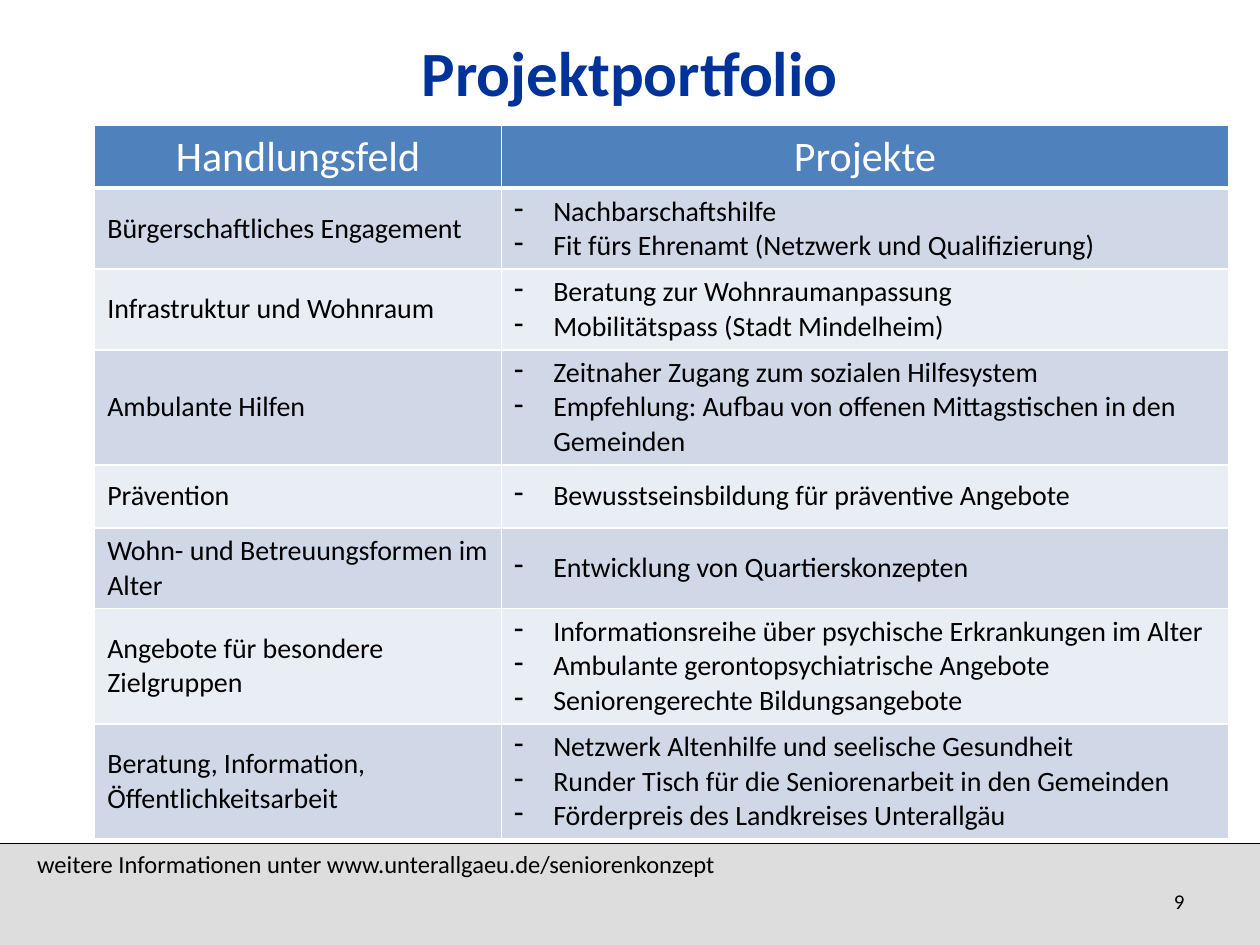
from lxml.etree import SubElement as Sub
from pptx import Presentation
from pptx.dml.color import RGBColor as Rgb
from pptx.enum.shapes import MSO_CONNECTOR as Link, MSO_SHAPE as Kind
from pptx.enum.text import MSO_ANCHOR as Anchor, PP_ALIGN as Align
from pptx.oxml.ns import qn
from pptx.util import Cm, Pt

TITLE = "Projektportfolio"
HEAD = ("Handlungsfeld", "Projekte")
FIELDS = [
    ("Bürgerschaftliches Engagement", 1.63,
     ["Nachbarschaftshilfe",
      "Fit fürs Ehrenamt (Netzwerk und Qualifizierung)"]),
    ("Infrastruktur und Wohnraum", 1.63,
     ["Beratung zur Wohnraumanpassung",
      "Mobilitätspass (Stadt Mindelheim)"]),
    ("Ambulante Hilfen", 2.32,
     ["Zeitnaher Zugang zum sozialen Hilfesystem",
      "Empfehlung: Aufbau von offenen Mittagstischen in den Gemeinden"]),
    ("Prävention", 1.27,
     ["Bewusstseinsbildung für präventive Angebote"]),
    ("Wohn- und Betreuungsformen im Alter", 1.63,
     ["Entwicklung von Quartierskonzepten"]),
    ("Angebote für besondere Zielgruppen", 2.32,
     ["Informationsreihe über psychische Erkrankungen im Alter",
      "Ambulante gerontopsychiatrische Angebote",
      "Seniorengerechte Bildungsangebote"]),
    ("Beratung, Information, Öffentlichkeitsarbeit", 2.32,
     ["Netzwerk Altenhilfe und seelische Gesundheit",
      "Runder Tisch für die Seniorenarbeit in den Gemeinden",
      "Förderpreis des Landkreises Unterallgäu"]),
]
NOTE = "weitere Informationen unter www.unterallgaeu.de/seniorenkonzept"
PAGE = "9"
COLS = (8.2, 14.66)
HEAD_H = 1.27
BANDS = ("D0D8E8", "E9EDF4")


def paint(target, color):
    """Give a fill or line fill one solid colour."""
    target.solid()
    target.fore_color.rgb = Rgb.from_string(color)


def write(frame, lines, size, color="000000", align=Align.LEFT, bold=False, dash=False):
    """Write one paragraph per line, with dashes if wanted."""
    frame.word_wrap = True
    frame.text = "\n".join(lines)
    for para in frame.paragraphs:
        para.alignment = align
        if dash:
            props = para._p.get_or_add_pPr()
            props.set("marL", str(Cm(0.79)))
            props.set("indent", str(-Cm(0.79)))
            Sub(props, qn("a:buFontTx"))
            Sub(props, qn("a:buChar"), char="-")
        font = para.font
        font.name, font.size, font.bold = "Calibri", Pt(size), bold
        font.color.rgb = Rgb.from_string(color)


def edge(cell, base=1):
    """Draw white borders around a cell."""
    props = cell._tc.get_or_add_tcPr()
    for side, width in zip("LRTB", (1, 1, 1, base)):
        line = Sub(props, qn(f"a:ln{side}"), w=str(Pt(width)))
        Sub(Sub(line, qn("a:solidFill")), qn("a:srgbClr"), val="FFFFFF")


def add_foot(slide):
    """Add the grey footer with its rule, note and page number."""
    bar = slide.shapes.add_shape(Kind.RECTANGLE, 0, Cm(17), Cm(25.4), Cm(2.05))
    bar.shadow.inherit = False
    paint(bar.fill, "DDDDDD")
    bar.line.fill.background()
    rule = slide.shapes.add_connector(Link.STRAIGHT, 0, Cm(17.01), Cm(25.4), Cm(17.01))
    paint(rule.line.fill, "000000")
    rule.line.width = Pt(0.75)
    Sub(rule._element.spPr, qn("a:effectLst"))
    note = slide.shapes.add_textbox(Cm(0.5), Cm(17), Cm(17.2), Cm(0.86))
    write(note.text_frame, [NOTE], 14)
    page = slide.shapes.add_textbox(Cm(22.1), Cm(17.65), Cm(2.03), Cm(1.02))
    page.text_frame.vertical_anchor = Anchor.MIDDLE
    write(page.text_frame, [PAGE], 12, align=Align.RIGHT)


def add_grid(slide):
    """Add the table of fields and projects."""
    highs = [HEAD_H] + [high for _, high, _ in FIELDS]
    grid = slide.shapes.add_table(len(highs), len(COLS), Cm(1.91), Cm(2.52),
                                  Cm(sum(COLS)), Cm(sum(highs))).table
    grid.first_row = grid.horz_banding = False
    for col, width in zip(grid.columns, COLS):
        col.width = Cm(width)
    for row, high in zip(grid.rows, highs):
        row.height = Cm(high)
    for col, name in enumerate(HEAD):
        cell = grid.cell(0, col)
        edge(cell, 3)
        paint(cell.fill, "4F81BD")
        write(cell.text_frame, [name], 24, "FFFFFF", Align.CENTER)
    for row, (field, _, tasks) in enumerate(FIELDS, 1):
        for col, lines in enumerate(([field], tasks)):
            cell = grid.cell(row, col)
            cell.vertical_anchor = Anchor.MIDDLE
            edge(cell)
            paint(cell.fill, BANDS[(row - 1) % 2])
            write(cell.text_frame, lines, 16, dash=col == 1)


def main():
    """Build the slide and save it."""
    deck = Presentation()
    deck.slide_width, deck.slide_height = Cm(25.4), Cm(19.05)
    slide = deck.slides.add_slide(deck.slide_layouts[5])
    add_foot(slide)
    title = slide.shapes.title
    title.left, title.top, title.width, title.height = Cm(1.27), Cm(0.76), Cm(22.86), Cm(1.37)
    title.text_frame.vertical_anchor = Anchor.MIDDLE
    write(title.text_frame, [TITLE], 36, "003399", Align.CENTER, bold=True)
    add_grid(slide)
    deck.save("out.pptx")


if __name__ == "__main__":
    main()
